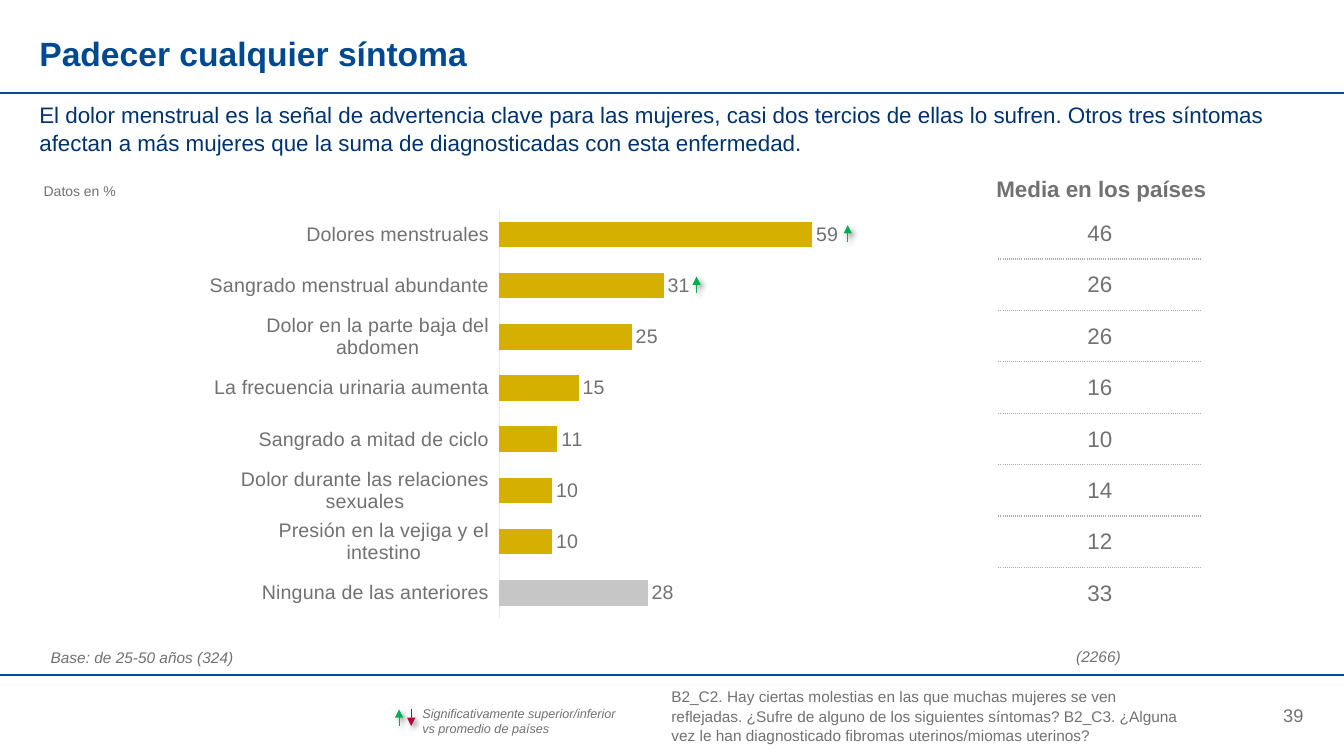
from lxml import etree
from pptx import Presentation
from pptx.chart.data import CategoryChartData
from pptx.dml.color import RGBColor
from pptx.enum.chart import XL_CHART_TYPE as ChartType, XL_LABEL_POSITION as LabelPos
from pptx.enum.chart import XL_TICK_LABEL_POSITION as TickLabel, XL_TICK_MARK as TickMark
from pptx.enum.shapes import MSO_CONNECTOR as Connector
from pptx.enum.text import MSO_ANCHOR as Anchor, MSO_AUTO_SIZE as AutoSize, PP_ALIGN as Align
from pptx.oxml import parse_xml
from pptx.oxml.ns import nsdecls, qn
from pptx.util import Inches, Pt

WIDTH, HEIGHT = Inches(13.333), Inches(7.5)
FONT = "Arial"
BLUE = RGBColor(0x00, 0x4D, 0x96)
TITLE_BLUE = RGBColor(0x00, 0x49, 0x90)
NAVY = RGBColor(0x00, 0x33, 0x6E)
GREY = RGBColor(0x71, 0x71, 0x71)
AXIS_GREY = RGBColor(0xEA, 0xEA, 0xEA)
GOLD = RGBColor(0xD5, 0xB0, 0x00)
SILVER = RGBColor(0xC6, 0xC6, 0xC6)
GREEN = RGBColor(0x00, 0xB0, 0x50)
RED = RGBColor(0xB3, 0x08, 0x38)
DOTTED = "AAAAAA"

# Positions are percentages of the slide's width and height.
LEFT = 2.93
TABLE_TOP, ROW = 27.47, 6.8
FOOTER_TOP, FOOTER_ROW = 93.2, 2.93
ARROW = 2.2

# Symptom, percentage here, mean across countries
SYMPTOMS = [
    ("Dolores menstruales", 59, 46),
    ("Sangrado menstrual abundante", 31, 26),
    ("Dolor en la parte baja del abdomen", 25, 26),
    ("La frecuencia urinaria aumenta", 15, 16),
    ("Sangrado a mitad de ciclo", 11, 10),
    ("Dolor durante las relaciones sexuales", 10, 14),
    ("Presión en la vejiga y el intestino", 10, 12),
    ("Ninguna de las anteriores", 28, 33),
]


def across(share):
    return int(WIDTH * share / 100)


def down(share):
    return int(HEIGHT * share / 100)


def area(left, top, width, height):
    return across(left), down(top), across(width), down(height)


def set_all(target, values):
    for name, value in values.items():
        setattr(target, name, value)


def style_font(font, size, color=GREY, **styles):
    set_all(font, {"name": FONT, "size": Pt(size), **styles})
    font.color.rgb = color


def write(frame, text, size, color=GREY, align=Align.LEFT, anchor=Anchor.TOP,
          inset=0, wrap=True, spacing=1.0, **styles):
    set_all(frame, {
        "text": text, "auto_size": AutoSize.NONE, "word_wrap": wrap, "vertical_anchor": anchor,
        "margin_left": Inches(inset), "margin_right": Inches(inset),
        "margin_top": Inches(inset), "margin_bottom": Inches(inset),
    })
    paragraph = frame.paragraphs[0]
    set_all(paragraph, {"alignment": align, "space_before": Pt(0), "line_spacing": spacing})
    style_font(paragraph.runs[0].font, size, color, **styles)


def add_label(slide, place, text, size, **options):
    write(slide.shapes.add_textbox(*area(*place)).text_frame, text, size, **options)


def add_line(slide, start, end, color, weight):
    line = slide.shapes.add_connector(
        Connector.STRAIGHT, across(start[0]), down(start[1]), across(end[0]), down(end[1]))
    line.line.color.rgb = color
    line.line.width = Pt(weight)
    effects = etree.SubElement(line._element.spPr, qn("a:effectLst"))
    return line, effects


def add_arrow(slide, x, middle, color, up=True):
    """Add a short shadowed vertical arrow centred on a height."""
    reach = ARROW / 2 if up else -ARROW / 2
    arrow, effects = add_line(slide, (x, middle + reach), (x, middle - reach), color, 0.75)
    etree.SubElement(arrow.line._get_or_add_ln(), qn("a:tailEnd"), type="triangle")
    effects.append(parse_xml(
        f'<a:outerShdw {nsdecls("a")} blurRad="{Pt(4)}" dist="{Pt(3)}" dir="2700000" '
        'algn="tl" rotWithShape="0"><a:srgbClr val="000000"><a:alpha val="40000"/>'
        '</a:srgbClr></a:outerShdw>'))


def set_plot_area(chart, x, y, w, h):
    values = "".join(f'<c:{tag} val="{value}"/>' for tag, value in zip("xywh", (x, y, w, h)))
    plot_area = chart._chartSpace.chart.plotArea
    for old in plot_area.findall(qn("c:layout")):
        plot_area.remove(old)
    plot_area.insert(0, parse_xml(
        f'<c:layout {nsdecls("c")}><c:manualLayout><c:layoutTarget val="inner"/>'
        f'<c:xMode val="edge"/><c:yMode val="edge"/>{values}</c:manualLayout></c:layout>'))


def add_symptom_chart(slide):
    data = CategoryChartData(number_format="0")
    data.categories = [symptom for symptom, _, _ in SYMPTOMS]
    data.add_series("Series 1", [share for _, share, _ in SYMPTOMS])
    chart = slide.shapes.add_chart(
        ChartType.BAR_CLUSTERED, *area(15.6, 25.6, 67.5, 58.27), data).chart
    set_all(chart, {"has_legend": False, "has_title": False})
    style_font(chart.font, 14)
    set_plot_area(chart, 0.319, 0.035, 0.468, 0.93)

    set_all(chart.category_axis, {
        "reverse_order": True, "has_major_gridlines": False,
        "major_tick_mark": TickMark.NONE, "minor_tick_mark": TickMark.NONE,
        "tick_label_position": TickLabel.LOW})
    axis_line = chart.category_axis.format.line
    axis_line.color.rgb = AXIS_GREY
    axis_line.width = Pt(0.75)
    set_all(chart.value_axis, {
        "visible": False, "has_major_gridlines": False,
        "minimum_scale": 0, "maximum_scale": 80})

    plot = chart.plots[0]
    set_all(plot, {"gap_width": 100, "vary_by_categories": False, "has_data_labels": True})
    set_all(plot.data_labels, {"show_value": True, "position": LabelPos.OUTSIDE_END})
    style_font(plot.data_labels.font, 14)
    bars = plot.series[0]
    none_of_these = bars.points[len(SYMPTOMS) - 1]
    for part, color in ((bars, GOLD), (none_of_these, SILVER)):
        part.format.fill.solid()
        part.format.fill.fore_color.rgb = color


def add_cell_borders(cell, sides):
    properties = cell._tc.get_or_add_tcPr()
    for position, side in enumerate(sides):
        properties.insert(position, parse_xml(
            f'<a:ln{side} {nsdecls("a")} w="{Pt(1)}"><a:solidFill><a:srgbClr val="{DOTTED}"/>'
            f'</a:solidFill><a:prstDash val="sysDot"/></a:ln{side}>'))


def add_mean_table(slide):
    count = len(SYMPTOMS)
    table = slide.shapes.add_table(
        count, 1, *area(74.33, TABLE_TOP, 15, ROW * count)).table
    set_all(table, {"first_row": False, "horz_banding": False})
    for index, (_, _, mean) in enumerate(SYMPTOMS):
        cell = table.cell(index, 0)
        cell.fill.background()
        set_all(cell, {
            "text": str(mean), "vertical_anchor": Anchor.MIDDLE, "margin_bottom": 0,
            "margin_left": Inches(0.01), "margin_right": Inches(0.01), "margin_top": Inches(0.01)})
        paragraph = cell.text_frame.paragraphs[0]
        paragraph.alignment = Align.CENTER
        style_font(paragraph.runs[0].font, 16)
        add_cell_borders(cell, ["T"] * (index > 0) + ["B"] * (index < count - 1))


def main():
    deck = Presentation()
    set_all(deck, {"slide_width": WIDTH, "slide_height": HEIGHT})
    slide = deck.slides.add_slide(deck.slide_layouts[5])

    for height in (12.27, 89.33):
        add_line(slide, (0, height), (100, height), BLUE, 1.5)
    title = slide.shapes.title
    set_all(title, dict(zip(("left", "top", "width", "height"), area(LEFT, 4.13, 94.05, 5.87))))
    write(title.text_frame, "Padecer cualquier síntoma", 24, color=TITLE_BLUE,
          anchor=Anchor.MIDDLE, bold=True)
    add_label(slide, (LEFT, 13.2, 94.13, 6.8),
              "El dolor menstrual es la señal de advertencia clave para las mujeres, casi dos "
              "tercios de ellas lo sufren. Otros tres síntomas afectan a más mujeres que la suma "
              "de diagnosticadas con esta enfermedad.", 16, color=NAVY, spacing=1.05)

    add_symptom_chart(slide)
    add_mean_table(slide)
    add_label(slide, (2.48, 24.13, 6.9, 2.27), "Datos en %", 10, align=Align.CENTER)
    add_label(slide, (73.73, 22.27, 16.43, 5.07), "Media en los países", 16, align=Align.CENTER,
              anchor=Anchor.BOTTOM, inset=0.05, wrap=False, bold=True)
    for row, x in enumerate((63.08, 51.83)):
        add_arrow(slide, x, TABLE_TOP + ROW * (row + 0.5), GREEN)

    add_label(slide, (3.08, 85.73, 15, 2.53), "Base: de 25-50 años (324)", 11,
              align=Align.CENTER, italic=True)
    add_label(slide, (68.4, 85.6, 15, 2.53), "(2266)", 11, align=Align.RIGHT, italic=True)

    add_arrow(slide, 29.7, 94.93, GREEN)
    add_arrow(slide, 30.6, 94.93, RED, up=False)
    add_label(slide, (31.43, 93.33, 15, 4),
              "Significativamente superior/inferior vs promedio de países", 9, italic=True)
    add_label(slide, (49.95, FOOTER_TOP, 38.33, FOOTER_ROW),
              "B2_C2. Hay ciertas molestias en las que muchas mujeres se ven reflejadas. ¿Sufre de "
              "alguno de los siguientes síntomas? B2_C3. ¿Alguna vez le han diagnosticado fibromas "
              "uterinos/miomas uterinos?", 11, anchor=Anchor.MIDDLE, spacing=1.05)
    add_label(slide, (89.03, FOOTER_TOP, 7.95, FOOTER_ROW), "39", 13,
              align=Align.RIGHT, anchor=Anchor.MIDDLE)
    deck.save("out.pptx")


if __name__ == "__main__":
    main()
